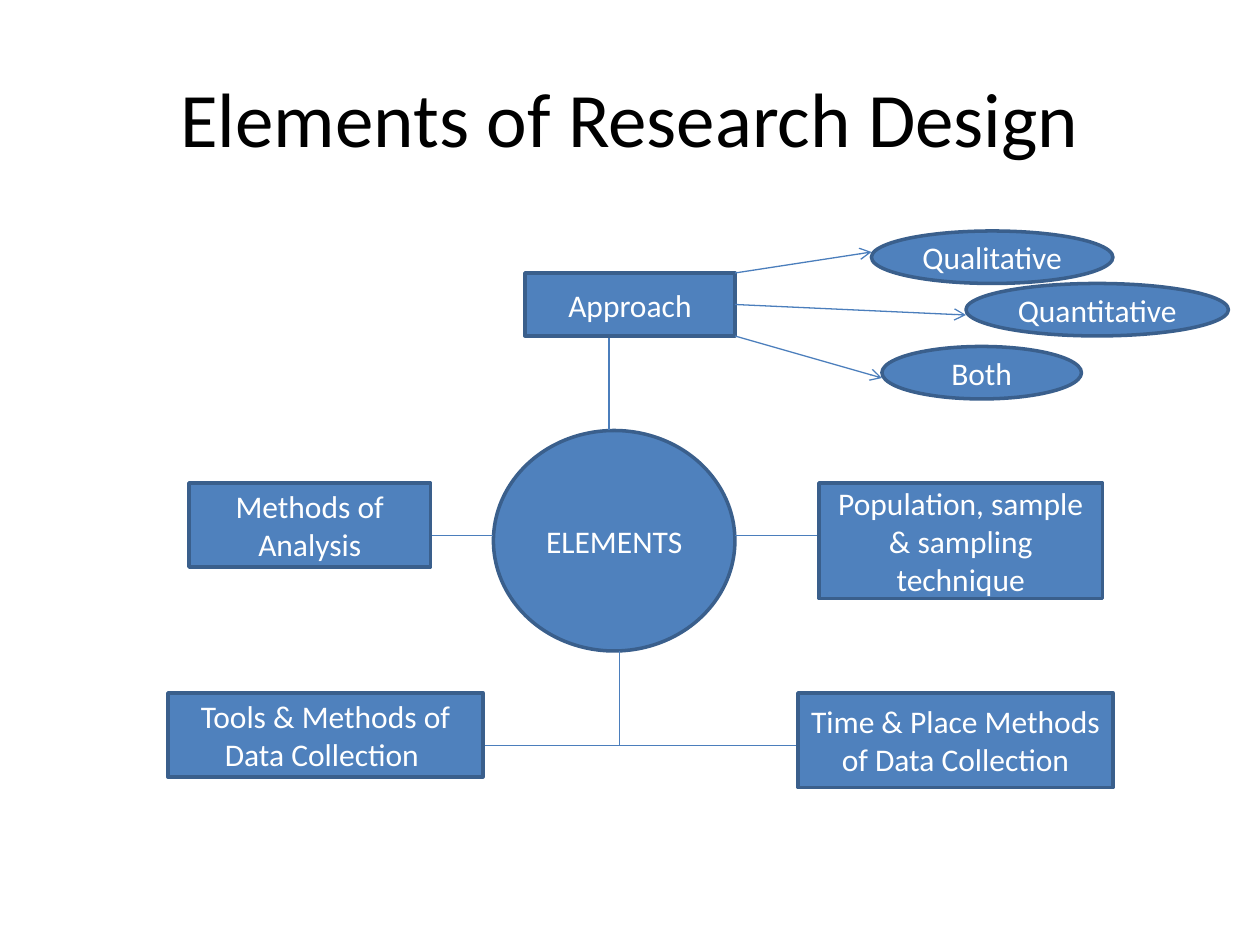
from lxml import etree
from pptx import Presentation
from pptx import util as u
from pptx.dml.color import RGBColor
from pptx.enum import shapes, text
from pptx.oxml.ns import qn

EMU_PER_PX = 7620
FONT = "Calibri"
FILL, OUTLINE, LINK = "4F81BD", "3A5F8C", "4B7EBC"
BLACK, WHITE = "000000", "FFFFFF"
RECTANGLE = shapes.MSO_SHAPE.RECTANGLE
OVAL = shapes.MSO_SHAPE.OVAL


def px(*lengths):
    return [u.Emu(length * EMU_PER_PX) for length in lengths]


def color(hex_string):
    return RGBColor.from_string(hex_string)


def write(shape, content, size=18, ink=WHITE):
    frame = shape.text_frame
    frame.word_wrap = True
    frame.vertical_anchor = text.MSO_ANCHOR.MIDDLE
    paragraph = frame.paragraphs[0]
    paragraph.alignment = text.PP_ALIGN.CENTER
    run = paragraph.add_run()
    run.text = content
    run.font.size = u.Pt(size)
    run.font.name = FONT
    run.font.color.rgb = color(ink)


def add_node(slide, kind, box, content):
    shape = slide.shapes.add_shape(kind, *px(*box))
    shape.shadow.inherit = False
    shape.fill.solid()
    shape.fill.fore_color.rgb = color(FILL)
    shape.line.color.rgb = color(OUTLINE)
    shape.line.width = u.Pt(2)
    write(shape, content)


def add_link(slide, start, end, arrow=False):
    connector = slide.shapes.add_connector(
        shapes.MSO_CONNECTOR.STRAIGHT, *px(*start, *end))
    connector.line.color.rgb = color(LINK)
    connector.line.width = u.Pt(0.75)
    if arrow:
        line = connector.line._get_or_add_ln()
        etree.SubElement(line, qn("a:tailEnd"), type="arrow")
    etree.SubElement(connector._element.spPr, qn("a:effectLst"))


def add_title(slide, box):
    write(slide.shapes.add_textbox(*px(*box)),
          "Elements of Research Design", size=44, ink=BLACK)


def add_elements(slide, box):
    left, top, width, height = box
    right, bottom = left + width, top + height
    hub_left, hub_width, hub_height = left + 310, 230, 210
    hub_right = hub_left + hub_width
    middle, bus = top + 100, bottom - 40
    stem = hub_left + 120

    add_node(slide, OVAL, (hub_left, top, hub_width, hub_height), "ELEMENTS")
    for start, end in [
        ((hub_right, middle), (right - 280, middle)),
        ((hub_left, middle), (left + 240, middle)),
        ((stem - 10, top - 90), (stem - 10, top)),
        ((stem, top + hub_height), (stem, bus)),
        ((left + 290, bus), (right - 300, bus)),
    ]:
        add_link(slide, start, end)
    for node_box, label in [
        ((left + 20, top + 50, 230, 80), "Methods of Analysis"),
        ((right - 280, top + 50, 270, 110),
         "Population, sample & sampling technique"),
        ((left, bottom - 90, 300, 80), "Tools & Methods of Data Collection "),
        ((right - 300, bottom - 90, 300, 90),
         "Time & Place Methods of Data Collection"),
    ]:
        add_node(slide, RECTANGLE, node_box, label)


def add_approaches(slide, box):
    left, top, width, height = box
    root_top, root_width, root_height = top + 40, 200, 60
    add_node(slide, RECTANGLE, (left, root_top, root_width, root_height), "Approach")
    options = [
        ("Qualitative", 330, 0, 230, 20),
        ("Quantitative", width - 250, 50, 250, 30),
        ("Both", 340, height - 50, 190, 30),
    ]
    for index, (label, x, y, option_width, tip) in enumerate(options):
        start = left + root_width, root_top + index * root_height // 2
        add_link(slide, start, (left + x, top + y + tip), arrow=True)
        add_node(slide, OVAL, (left + x, top + y, option_width, 50), label)


def main():
    presentation = Presentation()
    presentation.slide_width, presentation.slide_height = px(1200, 900)
    slide = presentation.slides.add_slide(presentation.slide_layouts[6])
    add_title(slide, (60, 36, 1080, 150))
    add_elements(slide, (160, 410, 900, 340))
    add_approaches(slide, (500, 220, 670, 160))
    presentation.save("out.pptx")


if __name__ == "__main__":
    main()
